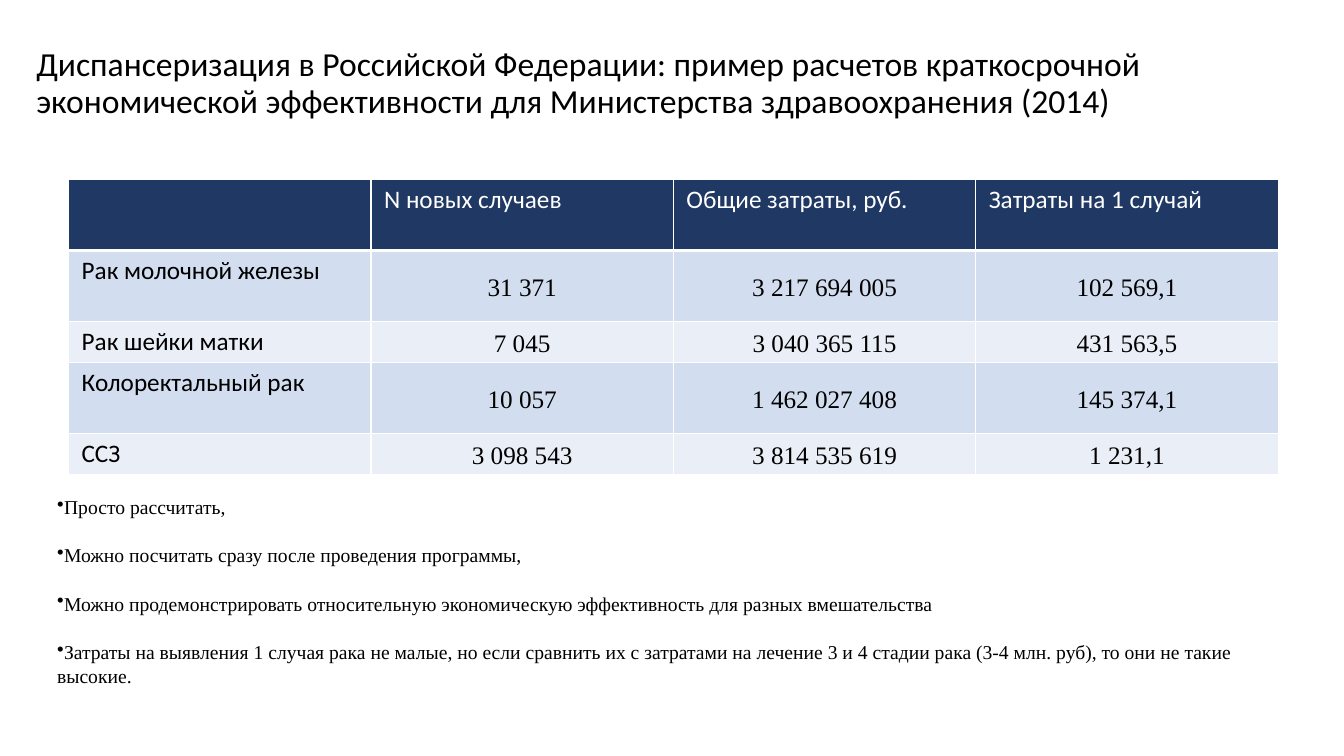
from lxml.etree import SubElement
from pptx import Presentation
from pptx.dml.color import RGBColor as Rgb
from pptx.enum.text import MSO_ANCHOR as Anchor, MSO_AUTO_SIZE as Fit, PP_ALIGN as Align
from pptx.oxml.ns import qn
from pptx.util import Cm, Pt

HUES = {
    "black": "000000",
    "white": "FFFFFF",
    "navy": "203864",
    "blue": "D2DEEF",
    "pale": "EAEFF7",
}
SANS, SERIF = "Calibri", "Times New Roman"
TITLE = ("Диспансеризация в Российской Федерации: пример расчетов краткосрочной "
         "экономической эффективности для Министерства здравоохранения (2014)")
ROWS = [
    ["", "N новых случаев", "Общие затраты, руб.", "Затраты на 1 случай"],
    ["Рак молочной железы", "31 371", "3 217 694 005", "102 569,1"],
    ["Рак шейки матки", "7 045", "3 040 365 115", "431 563,5"],
    ["Колоректальный рак", "10 057", "1 462 027 408", "145 374,1"],
    ["ССЗ", "3 098 543", "3 814 535 619", "1 231,1"],
]
TALL, LOW = 1.79, 1.03
HEIGHTS = [TALL, TALL, LOW, TALL, LOW]
NOTES = [
    "Просто рассчитать,",
    "Можно посчитать сразу после проведения программы,",
    "Можно продемонстрировать относительную экономическую эффективность "
    "для разных вмешательства",
    "Затраты на выявления 1 случая рака не малые, но если сравнить их с затратами "
    "на лечение 3 и 4 стадии рака (3-4 млн. руб), то они не такие высокие.",
]


def color(name):
    return Rgb.from_string(HUES[name])


def add_run(para, text, size, face, hue="black"):
    run = para.add_run()
    run.text = text
    font = run.font
    font.size, font.name, font.bold = Pt(size), face, False
    font.color.rgb = color(hue)


def add_title(slide):
    title = slide.shapes.title
    title.left, title.top = Cm(0.66), Cm(0.53)
    title.width, title.height = Cm(32.79), Cm(3.18)
    frame = title.text_frame
    frame.word_wrap, frame.auto_size = True, Fit.NONE
    frame.vertical_anchor = Anchor.MIDDLE
    para = frame.paragraphs[0]
    para.alignment, para.line_spacing = Align.LEFT, 0.9
    add_run(para, TITLE, 24, SANS)


def add_edges(cell, base):
    props = cell._tc.get_or_add_tcPr()
    for side, width in (("L", 1), ("R", 1), ("T", 1), ("B", base)):
        line = SubElement(props, qn(f"a:ln{side}"), w=str(Pt(width)))
        fill = SubElement(line, qn("a:solidFill"))
        SubElement(fill, qn("a:srgbClr"), val=HUES["white"])


def fill_cell(cell, text, row, col):
    head, value = row == 0, row > 0 and col > 0
    add_edges(cell, 3 if head else 1)
    cell.fill.solid()
    cell.fill.fore_color.rgb = color("navy" if head else "blue" if row % 2 else "pale")
    cell.margin_left = cell.margin_right = Cm(0.25 if value else 0.33)
    cell.margin_top = cell.margin_bottom = Cm(0 if value else 0.13)
    cell.vertical_anchor = Anchor.MIDDLE if value else Anchor.TOP
    para = cell.text_frame.paragraphs[0]
    if value:
        para.alignment, para.line_spacing = Align.CENTER, 1.15
    if text:
        add_run(para, text, 18, SERIF if value else SANS, "white" if head else "black")


def add_costs(slide):
    frame = slide.shapes.add_table(len(ROWS), len(ROWS[0]), Cm(1.73), Cm(4.52),
                                   Cm(30.48), Cm(sum(HEIGHTS)))
    table = frame.table
    table.horz_banding = False
    for col in table.columns:
        col.width = Cm(7.62)
    for r, (texts, height) in enumerate(zip(ROWS, HEIGHTS)):
        table.rows[r].height = Cm(height)
        for c, text in enumerate(texts):
            fill_cell(table.cell(r, c), text, r, c)


def add_notes(slide):
    box = slide.shapes.add_textbox(Cm(1.19), Cm(12.32), Cm(31.6), Cm(5.05))
    frame = box.text_frame
    frame.word_wrap = True
    for i, text in enumerate(NOTES):
        para = frame.add_paragraph() if i else frame.paragraphs[0]
        SubElement(para._p.get_or_add_pPr(), qn("a:buChar"), char="•")
        para.line_spacing = 1.05
        if i:
            para.space_before = Pt(16.8)
        add_run(para, text, 14, SERIF)


def main():
    deck = Presentation()
    deck.slide_width, deck.slide_height = Cm(33.87), Cm(19.05)
    slide = deck.slides.add_slide(deck.slide_layouts[5])
    add_title(slide)
    add_costs(slide)
    add_notes(slide)
    deck.save("out.pptx")


if __name__ == "__main__":
    main()
